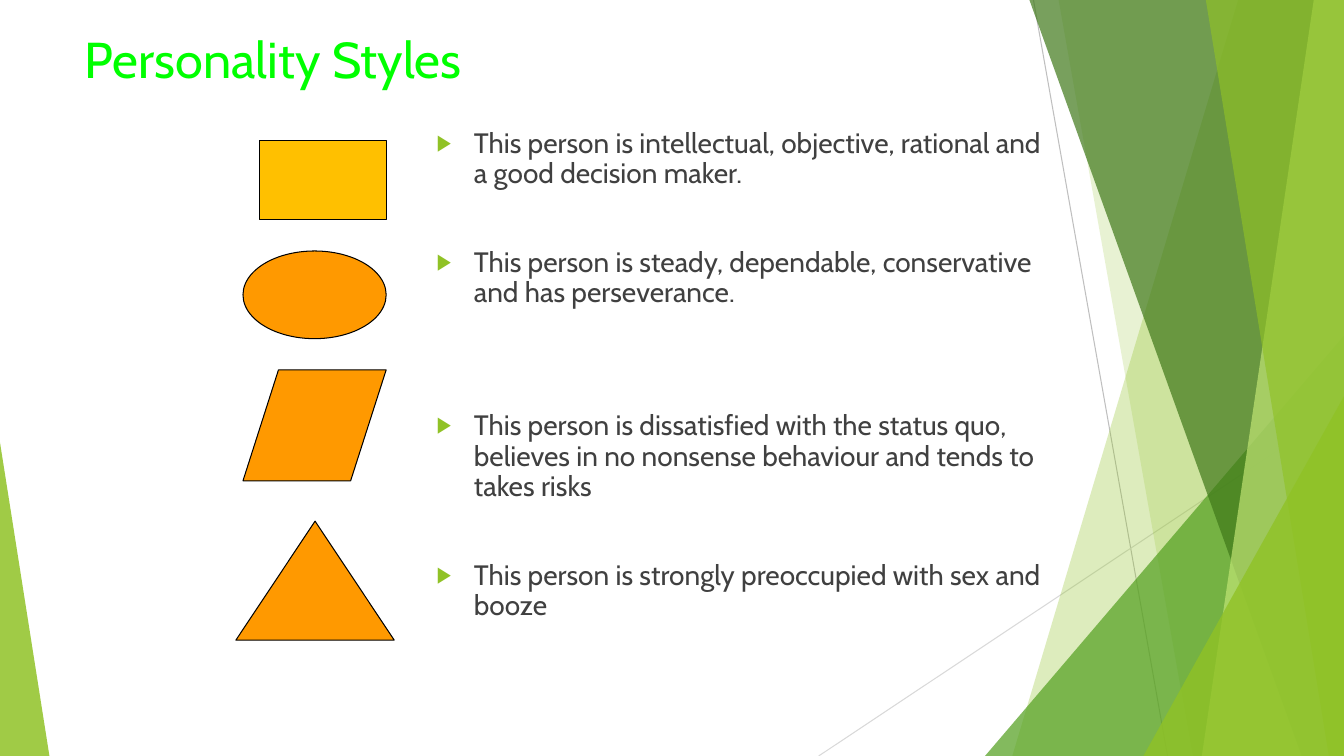
"""Build the Personality Styles slide."""
from dataclasses import dataclass

from lxml.etree import SubElement
from pptx import Presentation
from pptx.dml.color import RGBColor
from pptx.enum.shapes import MSO_CONNECTOR as Connector, MSO_SHAPE as Preset
from pptx.enum.text import MSO_ANCHOR as Anchor, MSO_AUTO_SIZE as AutoSize, PP_ALIGN as Align
from pptx.oxml.ns import qn
from pptx.util import Inches, Pt


@dataclass(frozen=True)
class Theme:
    """Colours, font and type sizes of the slide."""
    font: str = "Cabin"
    title_size: int = 36
    body_size: int = 20
    title: str = "00FF00"
    body: str = "404040"
    lime: str = "90C226"
    green: str = "54A021"
    forest: str = "3F7819"
    pale: str = "C0E474"
    amber: str = "FFC000"
    orange: str = "FF9900"
    outline: str = "000000"
    ray: str = "BFBFBF"
    faint_ray: str = "D9D9D9"


@dataclass(frozen=True)
class Box:
    """A region in inches."""
    left: float
    top: float
    width: float
    height: float

    def inches(self):
        """Return the four lengths as Inches."""
        return [Inches(v) for v in (self.left, self.top, self.width, self.height)]


THEME = Theme()
SLIDE = Box(0, 0, 13.33, 7.5)

STYLES = [
    ("This person is intellectual, objective, rational and a good decision maker.", 10),
    ("This person is steady, dependable, conservative and has perseverance.", 42),
    ("This person is dissatisfied with the status quo, believes in no nonsense "
     "behaviour and tends to takes risks", 73.5),
    ("This person is strongly preoccupied with sex and booze", 42),
]


def apply(target, formats):
    """Set each attribute of target from a dict of format values."""
    for name, value in formats.items():
        setattr(target, name, value)


def paint(shape, color, opacity=100, outline=None):
    """Fill a shape, with optional transparency and outline."""
    shape.shadow.inherit = False
    shape.fill.solid()
    shape.fill.fore_color.rgb = RGBColor.from_string(color)
    if opacity < 100:
        tint = shape.fill._xPr.find(qn("a:solidFill"))[0]
        SubElement(tint, qn("a:alpha"), val=str(opacity * 1000))
    if outline:
        shape.line.color.rgb = RGBColor.from_string(outline)
        shape.line.width = Pt(0.75)
    else:
        shape.line.fill.background()


def add_ray(slide, start, end, color):
    """Draw one thin background line."""
    ray = slide.shapes.add_connector(
        Connector.STRAIGHT, *[Inches(v) for v in (*start, *end)])
    ray.line.color.rgb = RGBColor.from_string(color)
    ray.line.width = Pt(0.75)
    SubElement(ray.element.spPr, qn("a:effectLst"))


def add_band(slide, box, top_x, bottom_x, color, opacity):
    """Draw a facet from a slanted left side to the right edge of the box."""
    right, bottom = box.left + box.width, box.top + box.height
    corners = [(top_x, box.top), (right, box.top), (right, bottom), (bottom_x, bottom)]
    start, *others = [(Inches(x), Inches(y)) for x, y in corners]
    outline = slide.shapes.build_freeform(*start)
    outline.add_line_segments(others, close=True)
    paint(outline.convert_to_shape(), color, opacity)


def add_wedge(slide, box, width, height, apex, color, opacity):
    """Draw a right triangle in a bottom corner of the box; apex 1 is the right one."""
    place = Box(box.left + apex * (box.width - width),
                box.top + box.height - height, width, height)
    wedge = slide.shapes.add_shape(Preset.ISOSCELES_TRIANGLE, *place.inches())
    wedge.adjustments[0] = apex
    paint(wedge, color, opacity)


def add_facets(slide, box):
    """Draw the layered green background."""
    right, bottom = box.left + box.width, box.top + box.height
    add_ray(slide, (right - 3.08, box.top), (right - 1.75, bottom), THEME.ray)
    add_ray(slide, (right, bottom - 3.47), (right - 5.21, bottom), THEME.faint_ray)
    layers = [
        (add_band, right - 1.05, right - 3.29, THEME.lime, 30),
        (add_band, right - 2.83, right - 1.5, THEME.lime, 20),
        (add_wedge, 3.56, 4.17, 1, THEME.green, 72),
        (add_band, right - 3.12, right - 0.42, THEME.forest, 70),
        (add_band, right - 0.3, right - 1.41, THEME.pale, 70),
        (add_band, right - 1.37, right - 0.15, THEME.lime, 65),
        (add_wedge, 1.99, 3.57, 1, THEME.lime, 80),
        (add_wedge, 0.49, 3.11, 0, THEME.lime, 85),
    ]
    for draw, *details in layers:
        draw(slide, box, *details)


def place_text(placeholder, box):
    """Move a placeholder into the box, in front of the background."""
    placeholder.element.getparent().append(placeholder.element)
    apply(placeholder, dict(zip(("left", "top", "width", "height"), box.inches())))
    apply(placeholder.text_frame, {
        "word_wrap": True, "auto_size": AutoSize.NONE, "vertical_anchor": Anchor.TOP})


def write(paragraph, text, size, color):
    """Add a left-aligned run in the theme font."""
    paragraph.alignment = Align.LEFT
    run = paragraph.add_run()
    run.text = text
    apply(run.font, {"name": THEME.font, "size": Pt(size)})
    run.font.color.rgb = RGBColor.from_string(color)


def add_bullet(paragraph):
    """Give a paragraph the green arrow bullet and hanging indent."""
    props = paragraph._p.get_or_add_pPr()
    hang = Inches(0.37)
    props.set("marL", str(hang))
    props.set("indent", str(-hang))
    SubElement(SubElement(props, qn("a:buClr")), qn("a:srgbClr"), val=THEME.lime)
    SubElement(props, qn("a:buSzPct"), val="80000")
    SubElement(props, qn("a:buChar"), char="▶")


def add_title(slide, box):
    """Write the slide title."""
    heading = slide.shapes.title
    place_text(heading, box)
    write(heading.text_frame.paragraphs[0], "Personality Styles",
          THEME.title_size, THEME.title)


def add_descriptions(slide, box):
    """Write one bullet for each personality style."""
    descriptions = slide.placeholders[1]
    place_text(descriptions, box)
    frame = descriptions.text_frame
    for index, (style, gap) in enumerate(STYLES):
        paragraph = frame.add_paragraph() if index else frame.paragraphs[0]
        apply(paragraph, {"line_spacing": 0.9, "space_before": Pt(gap)})
        add_bullet(paragraph)
        write(paragraph, style, THEME.body_size, THEME.body)


def add_symbols(slide, box):
    """Draw the symbol that stands for each personality style."""
    symbols = [
        (Preset.RECTANGLE, Box(0.23, 0, 1.26, 0.79), THEME.amber, None),
        (Preset.OVAL, Box(0.07, 1.1, 1.42, 0.87), THEME.orange, None),
        (Preset.PARALLELOGRAM, Box(0.07, 2.28, 1.42, 1.1), THEME.orange, 0.32),
        (Preset.ISOSCELES_TRIANGLE, Box(0, 3.78, 1.57, 1.18), THEME.orange, 0.5),
    ]
    for preset, offset, color, slant in symbols:
        place = Box(box.left + offset.left, box.top + offset.top,
                    offset.width, offset.height)
        symbol = slide.shapes.add_shape(preset, *place.inches())
        if slant:
            symbol.adjustments[0] = slant
        paint(symbol, color, outline=THEME.outline)


def main():
    """Assemble and save the slide."""
    deck = Presentation()
    apply(deck, {"slide_width": Inches(SLIDE.width), "slide_height": Inches(SLIDE.height)})
    slide = deck.slides.add_slide(deck.slide_layouts[1])
    add_facets(slide, SLIDE)
    add_descriptions(slide, Box(4.23, 1.23, 6.21, 5.47))
    add_title(slide, Box(0.74, 0.23, 9.4, 1.16))
    add_symbols(slide, Box(2.34, 1.39, 1.57, 4.96))
    deck.save("out.pptx")


if __name__ == "__main__":
    main()
